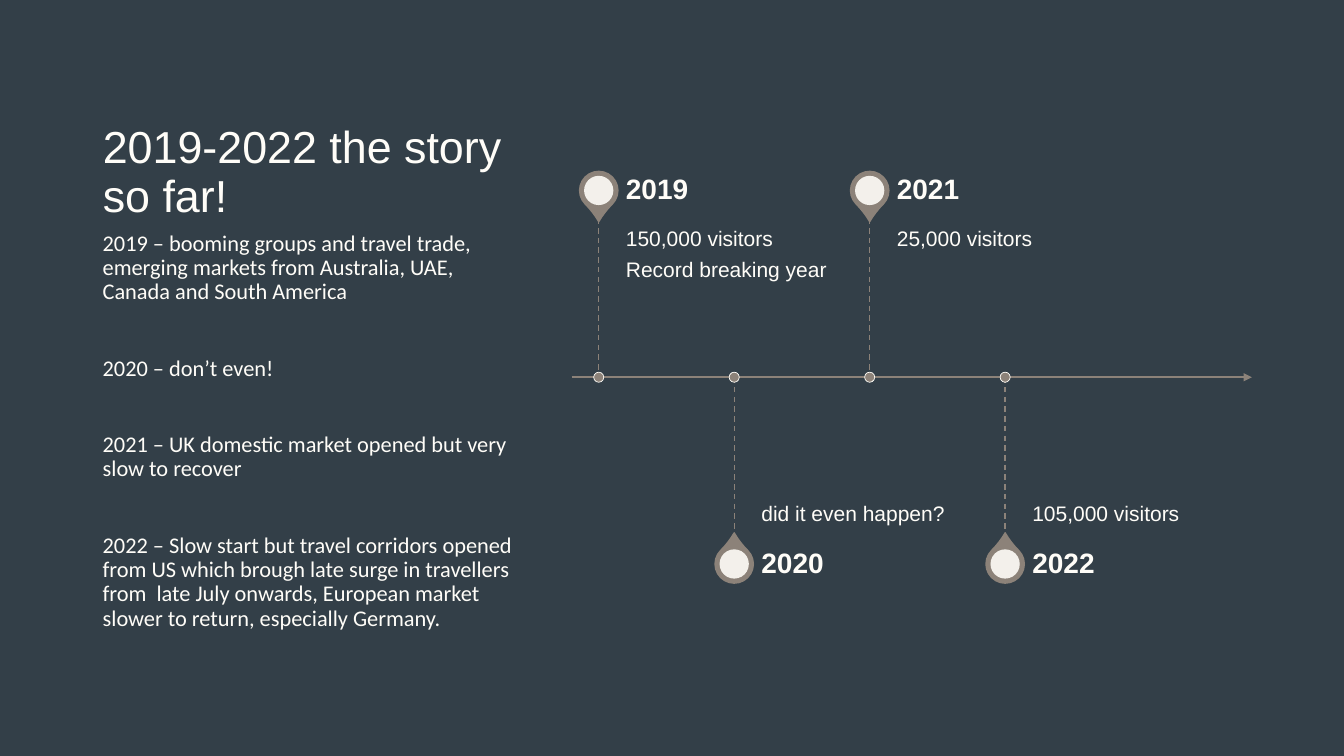
"""Build a slide with a four-year visitor timeline beside a short commentary."""
from dataclasses import dataclass

from lxml.etree import SubElement
from pptx import Presentation
from pptx.dml.color import RGBColor
from pptx.enum.dml import MSO_LINE
from pptx.enum.shapes import MSO_CONNECTOR, MSO_SHAPE
from pptx.enum.text import MSO_ANCHOR as ANCHOR, MSO_AUTO_SIZE, PP_ALIGN
from pptx.oxml.ns import qn
from pptx.util import Inches, Pt

SLIDE_W, SLIDE_H = Inches(13.33), Inches(7.5)


@dataclass(frozen=True)
class Theme:
    back: RGBColor = RGBColor(0x33, 0x3F, 0x48)
    ink: RGBColor = RGBColor(0xFF, 0xFD, 0xF8)
    accent: RGBColor = RGBColor(0x8C, 0x82, 0x79)
    heading: str = "Arial"
    body: str = "Calibri"
    title_size: int = 32
    body_size: int = 16
    year_size: int = 20
    note_size: int = 15


THEME = Theme()
TITLE = "2019-2022 the story so far!"
STORY = [
    "2019 – booming groups and travel trade, emerging markets from Australia, UAE, Canada and South America",
    "2020 – don’t even!",
    "2021 – UK domestic market opened but very slow to recover",
    "2022 – Slow start but travel corridors opened from US which brough late surge in travellers "
    "from  late July onwards, European market slower to return, especially Germany.",
]
MILESTONES = [
    ("2019", ["150,000 visitors", "Record breaking year"]),
    ("2020", ["did it even happen?"]),
    ("2021", ["25,000 visitors"]),
    ("2022", ["105,000 visitors"]),
]

LEFT, COLUMN_W = 6.9, 32.25
AXIS_START, AXIS_END, AXIS_Y = 42.53, 93.15, 49.9
FIRST_X, STEP_X = 44.55, 10.08
STEM, YEAR_H = 21.03, 7.35
LABEL_GAP, LABEL_W = 2.02, 16.28
PIN, CORE, DOT = 2.85, 2.18, 0.75


def across(share):
    return int(SLIDE_W * share / 100)


def down(share):
    return int(SLIDE_H * share / 100)


def fill_text(sp, lines, size, font=THEME.heading, bold=False, anchor=ANCHOR.TOP,
              insets=(0.1, 0.05, 0.1, 0.05), before=0, after=0):
    tf = sp.text_frame
    tf.word_wrap = True
    tf.auto_size = MSO_AUTO_SIZE.NONE
    tf.vertical_anchor = anchor
    tf.margin_left, tf.margin_top, tf.margin_right, tf.margin_bottom = map(Inches, insets)
    tf.text = "\n".join(lines)
    for i, p in enumerate(tf.paragraphs):
        p.alignment = PP_ALIGN.LEFT
        p.line_spacing = 0.9
        p.space_before = Pt(before if i else 0)
        p.space_after = Pt(after)
        for r in p.runs:
            r.font.name, r.font.size, r.font.bold = font, Pt(size), bold
            r.font.color.rgb = THEME.ink


def add_text(s, x, y, w, h, lines, size, **style):
    sp = s.shapes.add_textbox(across(x), down(y), across(w), down(h))
    fill_text(sp, lines, size, **style)


def add_title(s):
    sp = s.shapes.title
    sp.left, sp.top = across(LEFT), down(6.67)
    sp.width, sp.height = across(COLUMN_W), down(23.33)
    fill_text(sp, [TITLE], THEME.title_size, anchor=ANCHOR.BOTTOM)


def add_line(s, x1, y1, x2, y2, width, dashed=False, arrow=False):
    ln = s.shapes.add_connector(MSO_CONNECTOR.STRAIGHT, across(x1), down(y1), across(x2), down(y2))
    ln.line.color.rgb = THEME.accent
    ln.line.width = Pt(width)
    if dashed:
        ln.line.dash_style = MSO_LINE.DASH
    if arrow:
        SubElement(ln.line._get_or_add_ln(), qn("a:tailEnd"), type="triangle")
    SubElement(ln._element.spPr, qn("a:effectLst"))


def add_marker(s, kind, x, y, size, fill, line=None, width=1):
    d = across(size)
    sp = s.shapes.add_shape(kind, across(x) - d // 2, down(y) - d // 2, d, d)
    sp.shadow.inherit = False
    sp.fill.solid()
    sp.fill.fore_color.rgb = fill
    if line is None:
        sp.line.fill.background()
    else:
        sp.line.color.rgb = line
        sp.line.width = Pt(width)
    return sp


def add_pin(s, x, y, rotation):
    drop = add_marker(s, MSO_SHAPE.TEAR, x, y, PIN, THEME.accent, THEME.accent)
    drop.adjustments[0] = 1.15
    drop.rotation = rotation
    core = add_marker(s, MSO_SHAPE.OVAL, x, y, CORE, THEME.ink)
    color = core._element.spPr.find(qn("a:solidFill")).find(qn("a:srgbClr"))
    SubElement(color, qn("a:alpha"), val="90000")


def add_milestone(s, x, year, notes, above):
    side = -1 if above else 1
    tip = AXIS_Y + side * STEM
    year_y = tip + side * YEAR_H / 2
    add_pin(s, x, year_y, 135 if above else 315)
    add_text(s, x + LABEL_GAP, min(tip, AXIS_Y), LABEL_W, STEM, notes, THEME.note_size,
             anchor=ANCHOR.TOP if above else ANCHOR.BOTTOM,
             insets=(0, 0.1, 0.1, 0.16) if above else (0, 0.16, 0, 0.1), after=6)
    add_text(s, x + LABEL_GAP, year_y - YEAR_H / 2, LABEL_W, YEAR_H, [year], THEME.year_size,
             bold=True, anchor=ANCHOR.MIDDLE, insets=(0, 0, 0.14, 0))
    add_line(s, x, min(tip, AXIS_Y), x, max(tip, AXIS_Y), 1, dashed=True)
    add_marker(s, MSO_SHAPE.OVAL, x, AXIS_Y, DOT, THEME.accent, THEME.ink, 0.5)


def main():
    prs = Presentation()
    prs.slide_width, prs.slide_height = SLIDE_W, SLIDE_H
    s = prs.slides.add_slide(prs.slide_layouts[5])
    s.background.fill.solid()
    s.background.fill.fore_color.rgb = THEME.back
    add_title(s)
    add_text(s, LEFT, 30, COLUMN_W, 62.27, STORY, THEME.body_size, font=THEME.body, before=37.5)
    add_line(s, AXIS_START, AXIS_Y, AXIS_END, AXIS_Y, 1.5, arrow=True)
    for i, (year, notes) in enumerate(MILESTONES):
        add_milestone(s, FIRST_X + i * STEP_X, year, notes, above=i % 2 == 0)
    prs.save("out.pptx")


if __name__ == "__main__":
    main()
